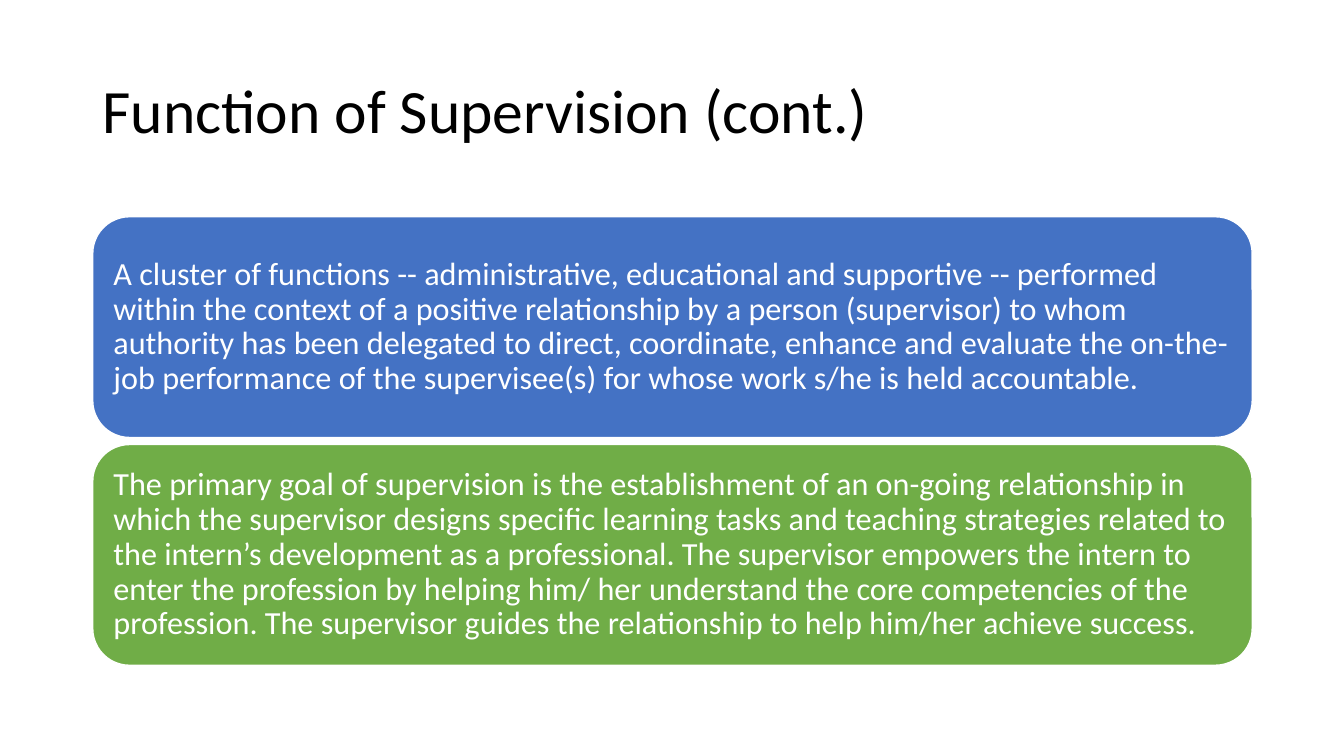
import pptx
import pptx.dml.color
import pptx.enum.shapes
import pptx.enum.text
import pptx.util

FUNCTIONS = [
    ("4472C4", "A cluster of functions -- administrative, educational and supportive -- performed "
     "within the context of a positive relationship by a person (supervisor) to whom authority "
     "has been delegated to direct, coordinate, enhance and evaluate the on-the-job performance "
     "of the supervisee(s) for whose work s/he is held accountable."),
    ("70AD47", "The primary goal of supervision is the establishment of an on-going relationship in "
     "which the supervisor designs specific learning tasks and teaching strategies related to the "
     "intern’s development as a professional. The supervisor empowers the intern to enter the "
     "profession by helping him/ her understand the core competencies of the profession. The "
     "supervisor guides the relationship to help him/her achieve success."),
]


def colour(code):
    return pptx.dml.color.RGBColor.from_string(code)


def write(box, text, size, color, font="Calibri", inset=0.1, inset_y=0.05):
    frame = box.text_frame
    frame.word_wrap = True
    frame.vertical_anchor = pptx.enum.text.MSO_ANCHOR.MIDDLE
    frame.margin_left = frame.margin_right = pptx.util.Inches(inset)
    frame.margin_top = frame.margin_bottom = pptx.util.Inches(inset_y)
    para = frame.paragraphs[0]
    para.alignment = pptx.enum.text.PP_ALIGN.LEFT
    para.line_spacing = 0.9
    span = para.add_run()
    span.text = text
    span.font.name = font
    span.font.size = pptx.util.Pt(size)
    span.font.color.rgb = colour(color)


class SupervisionSlide:
    """Draws on one slide with a shared margin, with rows measured in inches."""

    left, width = 0.92, 11.5

    def __init__(self, deck):
        self.page = deck.slides.add_slide(deck.slide_layouts[6])

    def area(self, top, height):
        return [pptx.util.Inches(v) for v in (self.left, top, self.width, height)]

    def title(self, text, top, height):
        box = self.page.shapes.add_textbox(*self.area(top, height))
        write(box, text, size=44, color="000000")

    def card(self, text, fill, top, height):
        rounded = pptx.enum.shapes.MSO_SHAPE.ROUNDED_RECTANGLE
        box = self.page.shapes.add_shape(rounded, *self.area(top, height))
        box.shadow.inherit = False
        box.fill.solid()
        box.fill.fore_color.rgb = colour(fill)
        box.line.color.rgb = colour("FFFFFF")
        box.line.width = pptx.util.Pt(1)
        write(box, text, size=23, color="FFFFFF", inset_y=0.1)


def main():
    deck = pptx.Presentation()
    deck.slide_width = pptx.util.Inches(13.33)
    deck.slide_height = pptx.util.Inches(7.5)
    slide = SupervisionSlide(deck)
    slide.title("Function of Supervision (cont.)", top=0.4, height=1.45)
    first_top, card_height, gap = 2.15, 2.19, 0.07
    for row, (fill, text) in enumerate(FUNCTIONS):
        slide.card(text, fill, first_top + row * (card_height + gap), card_height)
    deck.save("out.pptx")


if __name__ == "__main__":
    main()
